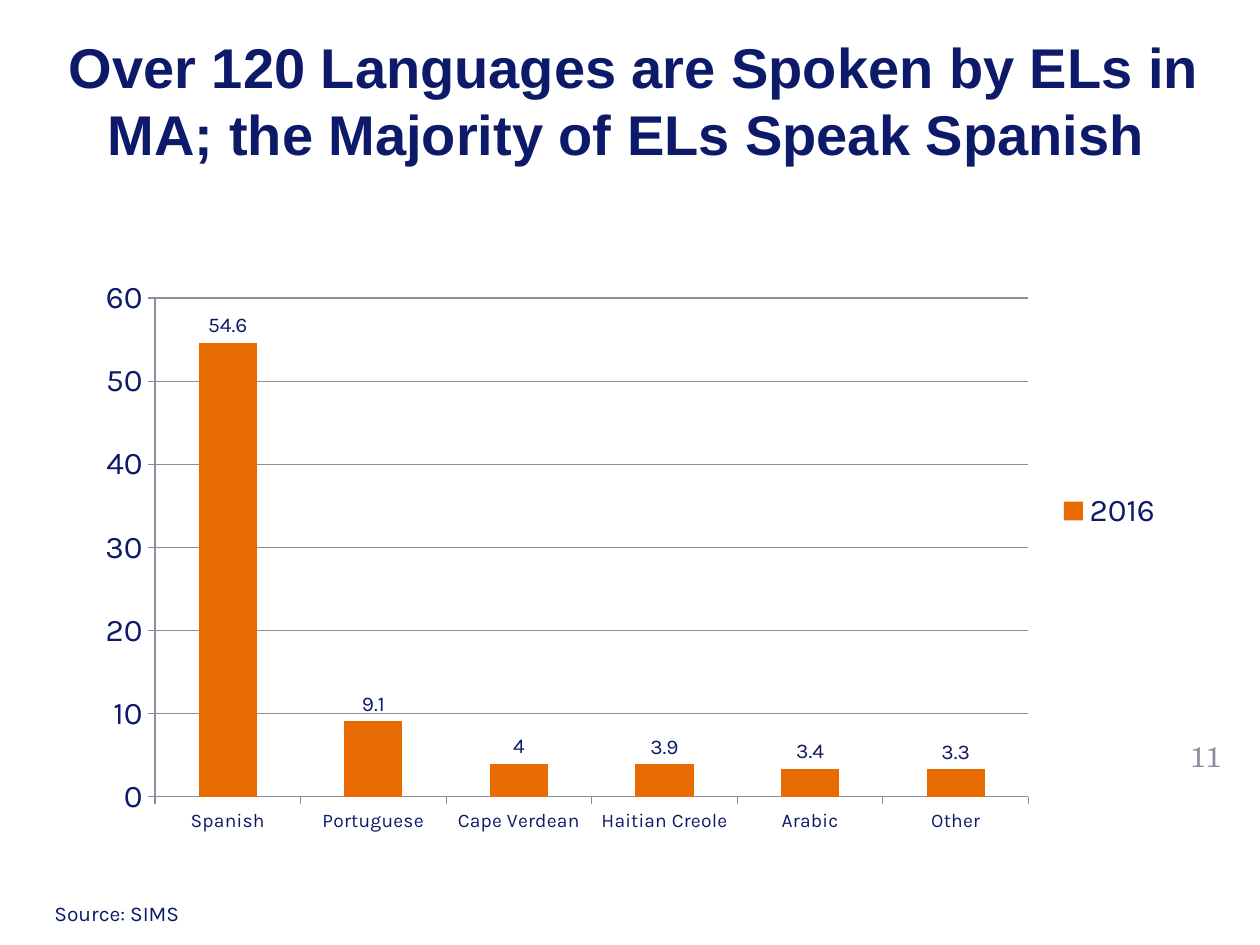
from pptx import Presentation
from pptx.chart.data import CategoryChartData
from pptx.dml.color import RGBColor
from pptx.enum.chart import (XL_CHART_TYPE, XL_LABEL_POSITION,
                             XL_LEGEND_POSITION, XL_TICK_MARK)
from pptx.enum.text import MSO_ANCHOR, PP_ALIGN
from pptx.oxml import parse_xml
from pptx.oxml.ns import nsdecls
from pptx.util import Pt

NAVY, ORANGE, GREY = "0D1969", "E86B01", "8C8CA1"
SHARES = {"Spanish": 54.6, "Portuguese": 9.1, "Cape Verdean": 4,
          "Haitian Creole": 3.9, "Arabic": 3.4, "Other": 3.3}


def color(code):
    return RGBColor.from_string(code)


def style(font, code=NAVY, **values):
    for name, value in values.items():
        setattr(font, name, value)
    font.color.rgb = color(code)


def add_text(slide, box, text, code, align, anchor, **values):
    frame = slide.shapes.add_textbox(*map(Pt, box)).text_frame
    frame.word_wrap = True
    frame.vertical_anchor = anchor
    para = frame.paragraphs[0]
    para.alignment = align
    run = para.add_run()
    run.text = text
    style(run.font, code, **values)


def place_plot(chart, **parts):
    """Fix the inner plot area, as fractions of the chart box."""
    sizes = "".join(f'<c:{k} val="{v}"/>' for k, v in parts.items())
    layout = parse_xml(
        f'<c:layout {nsdecls("c")}><c:manualLayout>'
        '<c:layoutTarget val="inner"/><c:xMode val="edge"/>'
        f'<c:yMode val="edge"/>{sizes}</c:manualLayout></c:layout>')
    area = chart.plots[0]._element.getparent()
    for old in area.findall(layout.tag):
        area.remove(old)
    area.insert(0, layout)


def add_bars(slide, box):
    data = CategoryChartData()
    data.categories = list(SHARES)
    data.add_series("2016", list(SHARES.values()))
    chart = slide.shapes.add_chart(
        XL_CHART_TYPE.COLUMN_CLUSTERED, *map(Pt, box), data).chart
    chart.has_title = False
    style(chart.font, name="Karla", size=Pt(18))
    place_plot(chart, x=0.065, y=0.18, w=0.8, h=0.75)

    # Bars and their values
    plot = chart.plots[0]
    plot.gap_width = 150
    plot.vary_by_categories = False
    bars = plot.series[0]
    bars.format.fill.solid()
    bars.format.fill.fore_color.rgb = color(ORANGE)
    labels = bars.data_labels
    labels.show_value = True
    labels.position = XL_LABEL_POSITION.OUTSIDE_END
    style(labels.font, name="Karla", size=Pt(12))

    # Axes and grid
    cats, vals = chart.category_axis, chart.value_axis
    vals.minimum_scale, vals.maximum_scale, vals.major_unit = 0, 60, 10
    vals.has_major_gridlines = True
    for axis, size in ((cats, 11), (vals, 18)):
        axis.major_tick_mark = XL_TICK_MARK.OUTSIDE
        style(axis.tick_labels.font, name="Karla", size=Pt(size))
    for part in (cats, vals, vals.major_gridlines):
        part.format.line.color.rgb = color(GREY)
        part.format.line.width = Pt(0.75)

    # Legend
    chart.has_legend = True
    chart.legend.position = XL_LEGEND_POSITION.RIGHT
    chart.legend.include_in_layout = False
    style(chart.legend.font, name="Karla", size=Pt(18))


def main():
    deck = Presentation()
    deck.slide_width, deck.slide_height = Pt(720), Pt(540)
    slide = deck.slides.add_slide(deck.slide_layouts[6])

    # Title
    add_text(slide, (24, 12, 677, 90),
             "Over 120 Languages are Spoken by ELs in MA; "
             "the Majority of ELs Speak Spanish ",
             NAVY, PP_ALIGN.CENTER, MSO_ANCHOR.MIDDLE,
             name="Arial", size=Pt(32), bold=True)
    add_bars(slide, (48, 102, 624, 380))
    # Page number and source
    add_text(slide, (668, 414, 42, 36), "11", GREY, PP_ALIGN.CENTER,
             MSO_ANCHOR.MIDDLE, name="TeX Gyre Schola", size=Pt(16))
    add_text(slide, (24, 511, 354, 22), "Source: SIMS", NAVY, PP_ALIGN.LEFT,
             MSO_ANCHOR.TOP, name="Karla", size=Pt(12))
    deck.save("out.pptx")


if __name__ == "__main__":
    main()
